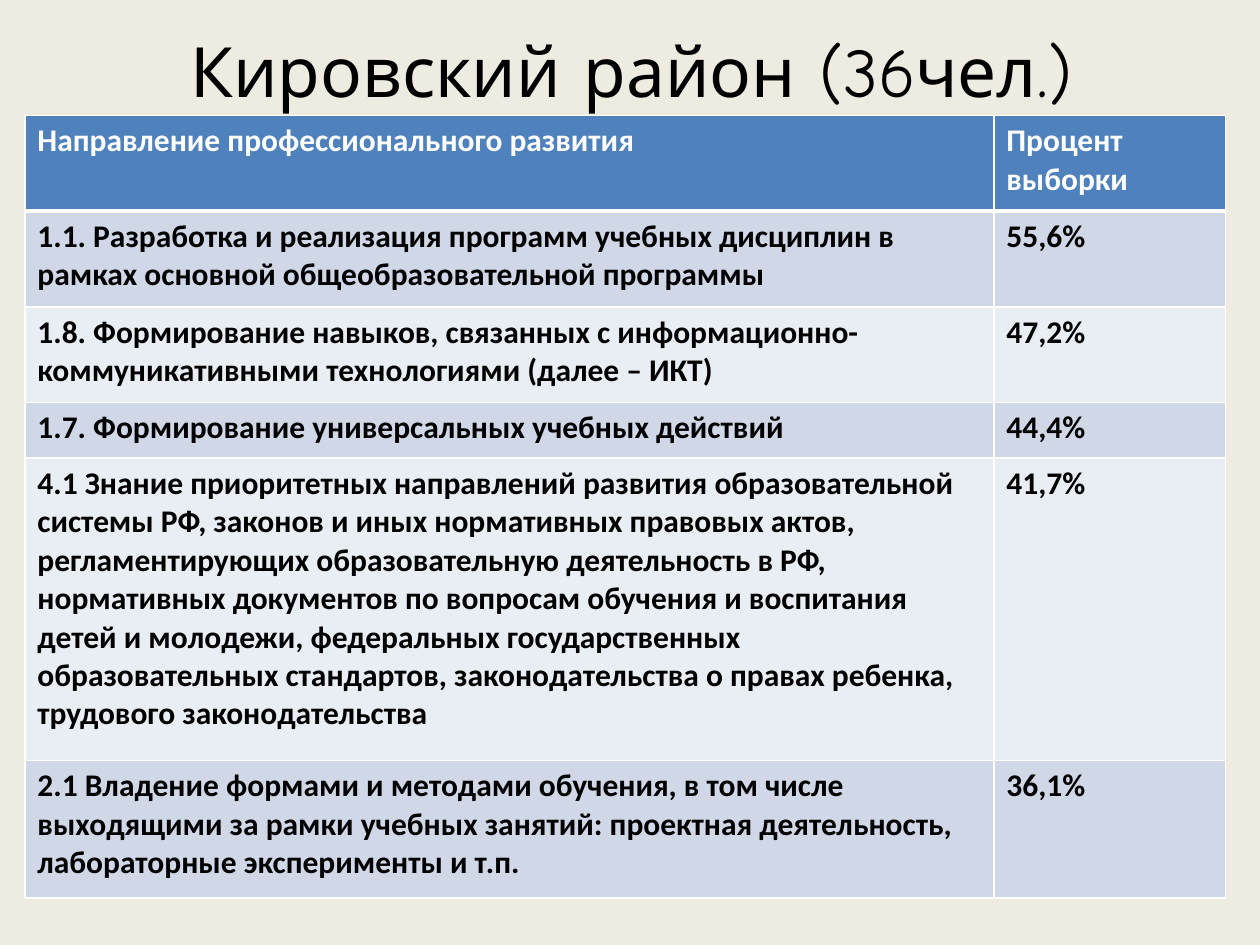
from lxml import etree
from pptx import Presentation
from pptx.dml.color import RGBColor
from pptx.enum.text import MSO_ANCHOR, PP_ALIGN
from pptx.oxml.ns import qn
from pptx.util import Pt

CENTER, MIDDLE = PP_ALIGN.CENTER, MSO_ANCHOR.MIDDLE
CREAM = RGBColor(0xEE, 0xEC, 0xE1)
BLUE = RGBColor(0x4F, 0x81, 0xBD)
BAND_DARK = RGBColor(0xD0, 0xD8, 0xE8)
BAND_LIGHT = RGBColor(0xE9, 0xED, 0xF4)
WHITE = RGBColor(0xFF, 0xFF, 0xFF)
BLACK = RGBColor(0, 0, 0)


def write(tf, text, color, **font):
    r = tf.paragraphs[0].add_run()
    r.text = text
    r.font.color.rgb = color
    for name, value in font.items():
        setattr(r.font, name, value)


def add_border(cell, side, width):
    ln = etree.SubElement(cell._tc.get_or_add_tcPr(), qn(f"a:{side}"), w=str(Pt(width)))
    fill = etree.SubElement(ln, qn("a:solidFill"))
    etree.SubElement(fill, qn("a:srgbClr"), val=str(WHITE))


prs = Presentation()
prs.slide_width, prs.slide_height = Pt(720), Pt(540)
s = prs.slides.add_slide(prs.slide_layouts[6])
s.background.fill.solid()
s.background.fill.fore_color.rgb = CREAM

# Title
sp = s.shapes.add_textbox(Pt(36.7), Pt(15.1), Pt(648), Pt(49.7))
tf = sp.text_frame
tf.word_wrap = True
tf.vertical_anchor = MIDDLE
tf.paragraphs[0].alignment = CENTER
write(tf, "Кировский район (36чел.)", BLACK, size=Pt(39.6), name="Comic Neue")

# Table of directions: row height, direction, share
rows = [
    (54.7, "Направление профессионального развития", "Процент выборки"),
    (54.7, "1.1. Разработка и реализация программ учебных дисциплин в рамках "
           "основной общеобразовательной программы", "55,6%"),
    (54.7, "1.8. Формирование навыков, связанных с информационно-коммуникативными "
           "технологиями (далее – ИКТ)", "47,2%"),
    (31.7, "1.7. Формирование универсальных учебных действий", "44,4%"),
    (172.8, "4.1 Знание приоритетных направлений развития образовательной системы РФ, "
            "законов и иных нормативных правовых актов, регламентирующих образовательную "
            "деятельность в РФ, нормативных документов по вопросам обучения и воспитания "
            "детей и молодежи, федеральных государственных образовательных стандартов, "
            "законодательства о правах ребенка, трудового законодательства", "41,7%"),
    (78.5, "2.1 Владение формами и методами обучения, в том числе выходящими за рамки "
           "учебных занятий: проектная деятельность, лабораторные эксперименты и т.п.", "36,1%"),
]
widths = [553.7, 132.5]
height = sum(row[0] for row in rows)
table = s.shapes.add_table(len(rows), len(widths), Pt(14.2), Pt(66),
                           Pt(sum(widths)), Pt(height)).table
for column, width in zip(table.columns, widths):
    column.width = Pt(width)

for i, (row_height, *texts) in enumerate(rows):
    table.rows[i].height = Pt(row_height)
    band = BLUE if i == 0 else BAND_DARK if i % 2 else BAND_LIGHT
    for j, text in enumerate(texts):
        cell = table.cell(i, j)
        # The rule under the header is thicker than the rest
        for side in ("lnL", "lnR", "lnT", "lnB"):
            under_header = (i, side) in ((0, "lnB"), (1, "lnT"))
            add_border(cell, side, 3 if under_header else 1)
        cell.fill.solid()
        cell.fill.fore_color.rgb = band
        write(cell.text_frame, text, BLACK if i else WHITE,
              size=Pt(18), name="Calibri", bold=True)

prs.save("out.pptx")
